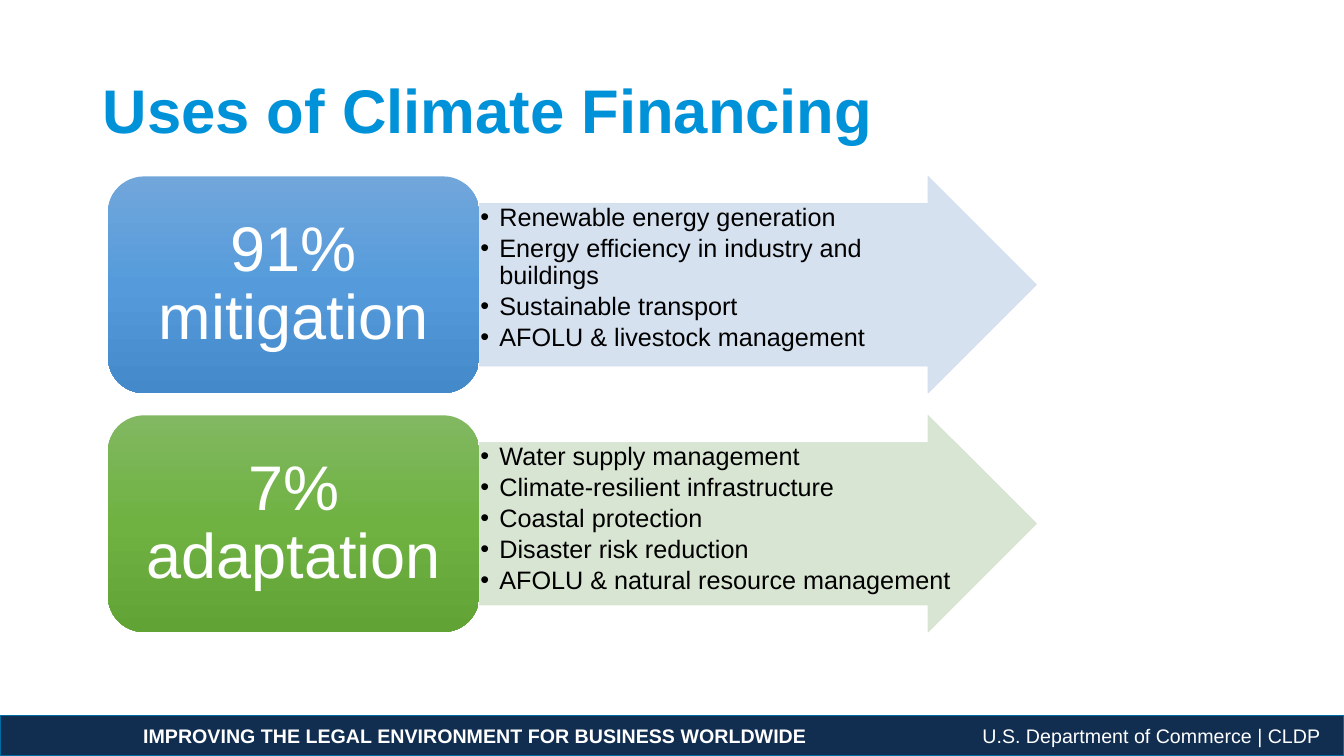
from copy import deepcopy
from dataclasses import dataclass
from lxml import etree
from pptx import Presentation
from pptx.dml.color import RGBColor
from pptx.enum.shapes import MSO_SHAPE
from pptx.enum.text import MSO_ANCHOR, PP_ALIGN
from pptx.oxml.ns import qn
from pptx.util import Inches, Pt

RECT, PILL, ARROW = MSO_SHAPE.RECTANGLE, MSO_SHAPE.ROUNDED_RECTANGLE, MSO_SHAPE.RIGHT_ARROW
TOP, MIDDLE = MSO_ANCHOR.TOP, MSO_ANCHOR.MIDDLE
LEFT, CENTER = PP_ALIGN.LEFT, PP_ALIGN.CENTER


@dataclass(frozen=True)
class Theme:
    face: str = "Arial"
    title: str = "0092D9"
    navy: str = "112E51"
    edge: str = "006CA1"
    white: str = "FFFFFF"
    black: str = "000000"
    head_size: int = 44
    use_size: int = 45
    item_size: int = 18
    foot_size: int = 14


THEME = Theme()
USES = [
    ("91% mitigation", ("71A6DB", "559BDB", "448ACA"), "D2DEEF", [
        "Renewable energy generation",
        "Energy efficiency in industry and buildings",
        "Sustainable transport",
        "AFOLU & livestock management",
    ]),
    ("7% adaptation", ("81B861", "6FB242", "62A336"), "D5E3CF", [
        "Water supply management",
        "Climate-resilient infrastructure",
        "Coastal protection",
        "Disaster risk reduction",
        "AFOLU & natural resource management",
    ]),
]


def color(code):
    return RGBColor.from_string(code)


def style(font, size, code, bold=False):
    font.name, font.size, font.bold = THEME.face, Pt(size), bold
    font.color.rgb = color(code)


def frame(shape, anchor, insets):
    text = shape.text_frame
    text.word_wrap = True
    text.vertical_anchor = anchor
    left, top, right, bottom = map(Inches, insets)
    text.margin_left, text.margin_top = left, top
    text.margin_right, text.margin_bottom = right, bottom
    return text


def block(slide, kind, box):
    shape = slide.shapes.add_shape(kind, *map(Inches, box))
    shape.shadow.inherit = False
    return shape


def fade(shape):
    for tint in shape._element.spPr.iter(qn("a:srgbClr")):
        etree.SubElement(tint, qn("a:alpha"), val="90000")


def blend(fill, codes):
    fill.gradient()
    fill.gradient_angle = 270
    first = fill.gradient_stops[0]._gs
    first.addnext(deepcopy(first))
    for stop, code, spot in zip(fill.gradient_stops, codes, (0, 0.5, 1)):
        stop.color.rgb = color(code)
        stop.position = spot


def bullet(para):
    props = para._p.get_or_add_pPr()
    props.set("marL", str(Inches(0.19)))
    props.set("indent", str(-Inches(0.19)))
    etree.SubElement(props, qn("a:buFont"), typeface=THEME.face)
    etree.SubElement(props, qn("a:buChar"), char="•")


def title(slide, box):
    shape = slide.shapes.add_textbox(*map(Inches, box))
    para = frame(shape, MIDDLE, (0.1, 0.05, 0.1, 0.05)).paragraphs[0]
    para.text = "Uses of Climate Financing"
    para.line_spacing = 0.9
    style(para.font, THEME.head_size, THEME.title, True)


def arrow(slide, box, tint, items):
    shape = block(slide, ARROW, box)
    shape.adjustments[0], shape.adjustments[1] = 0.75, 0.5
    shape.fill.solid()
    shape.fill.fore_color.rgb = color(tint)
    shape.line.color.rgb = color(tint)
    shape.line.width = Pt(0.5)
    fade(shape)
    text = frame(shape, TOP, (0.01, 0.01, 0.01, 0.01))
    text.text = "\n".join(items)
    for para in text.paragraphs:
        bullet(para)
        para.alignment = LEFT
        para.line_spacing = 0.9
        para.space_after = Pt(2.7)
        style(para.font, THEME.item_size, THEME.black)


def pill(slide, box, codes, label):
    shape = block(slide, PILL, box)
    blend(shape.fill, codes)
    shape.line.fill.background()
    para = frame(shape, MIDDLE, (0.19, 0.09, 0.19, 0.09)).paragraphs[0]
    para.text = label
    para.alignment = CENTER
    para.line_spacing = 0.9
    style(para.font, THEME.use_size, THEME.white)


def uses(slide, box):
    left, top, width, height = box
    gap = 0.22
    tall = (height - gap * (len(USES) - 1)) / len(USES)
    wide = width * 0.4
    for row, (label, codes, tint, items) in enumerate(USES):
        y = top + row * (tall + gap)
        arrow(slide, (left + wide, y, width - wide, tall), tint, items)
        pill(slide, (left, y, wide, tall), codes, label)


def footer(slide, box):
    shape = block(slide, RECT, box)
    shape.fill.solid()
    shape.fill.fore_color.rgb = color(THEME.navy)
    shape.line.color.rgb = color(THEME.edge)
    shape.line.width = Pt(1)
    para = frame(shape, MIDDLE, (1.42, 0.05, 0, 0.05)).paragraphs[0]
    tabs = etree.SubElement(para._p.get_or_add_pPr(), qn("a:tabLst"))
    etree.SubElement(tabs, qn("a:tab"), pos=str(Inches(11.68)), algn="r")
    para.alignment = LEFT
    parts = (("IMPROVING THE LEGAL ENVIRONMENT FOR BUSINESS WORLDWIDE", True),
             ("\tU.S. Department of Commerce | CLDP", False))
    for words, bold in parts:
        run = para.add_run()
        run.text = words
        style(run.font, THEME.foot_size, THEME.white, bold)


def main():
    deck = Presentation()
    deck.slide_width, deck.slide_height = Inches(13.33), Inches(7.5)
    slide = deck.slides.add_slide(deck.slide_layouts[6])
    footer(slide, (0, 7.1, 13.33, 0.4))
    title(slide, (0.92, 0.4, 11.5, 1.45))
    uses(slide, (1.07, 1.75, 9.21, 4.52))
    deck.save("out.pptx")


if __name__ == "__main__":
    main()
